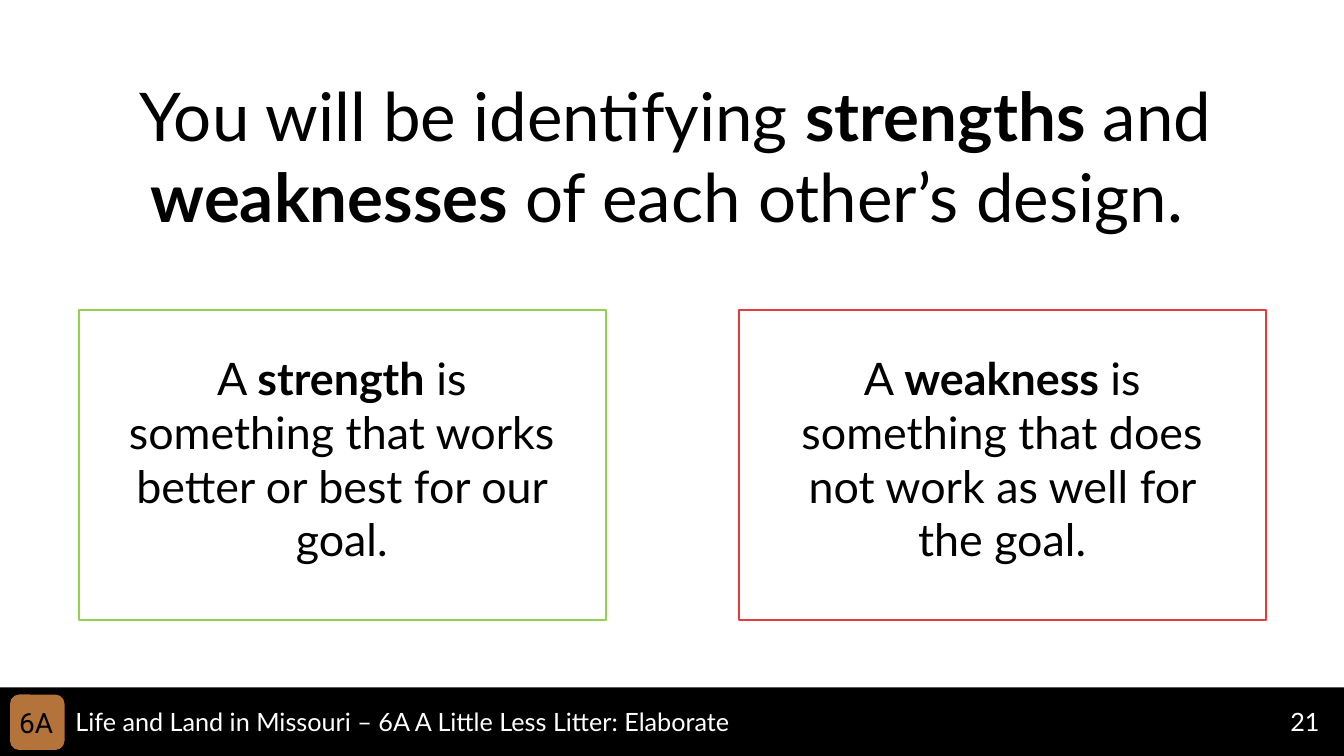
import pptx
import pptx.util
import pptx.dml.color
import pptx.enum.shapes
import pptx.enum.text

PX = 9144
RGBColor = pptx.dml.color.RGBColor
SHAPE = pptx.enum.shapes.MSO_SHAPE
ALIGN = pptx.enum.text.PP_ALIGN

BLACK = RGBColor(0x00, 0x00, 0x00)
WHITE = RGBColor(0xFF, 0xFF, 0xFF)
BROWN = RGBColor(0xB4, 0x73, 0x3B)
GREEN = RGBColor(0x92, 0xD0, 0x50)
RED = RGBColor(0xE4, 0x3C, 0x3C)


def to_emu(box):
    return [length * PX for length in box]


def add_panel(page, kind, box, fill=None, line=None):
    panel = page.shapes.add_shape(kind, *to_emu(box))
    panel.shadow.inherit = False
    if fill is None:
        panel.fill.background()
    else:
        panel.fill.solid()
        panel.fill.fore_color.rgb = fill
    if line is None:
        panel.line.fill.background()
    else:
        panel.line.color.rgb = line
        panel.line.width = pptx.util.Pt(1.5)


def add_text(page, box, spans, size, color=BLACK, font="Lato", align=ALIGN.LEFT):
    frame = page.shapes.add_textbox(*to_emu(box)).text_frame
    frame.word_wrap = True
    para = frame.paragraphs[0]
    para.alignment = align
    for words, bold in spans:
        span = para.add_run()
        span.text = words
        span.font.name = font
        span.font.size = pptx.util.Pt(size)
        span.font.bold = bold
        span.font.color.rgb = color


def add_footer(page, box, unit, title, number):
    left, top, width, height = box
    add_panel(page, SHAPE.RECTANGLE, box, fill=BLACK)
    add_text(page, (left + width - 63, top + 14, 54, 40), [(number, False)], 18, WHITE)
    add_text(page, (left + 65, top + 14, 861, 40), [(title, False)], 18, WHITE)
    add_panel(page, SHAPE.ROUNDED_RECTANGLE, (left + 10, top + 7, 54, 55), fill=BROWN)
    add_text(page, (left + 9, top + 13, 365, 44), [(unit, False)], 20, font="Roboto")


def add_headline(page, box, spans):
    add_text(page, box, spans, 48, align=ALIGN.CENTER)


def add_definition(page, box, spans, color):
    left, top, width, height = box
    text_box = (left + 31, top + 35, width - 63, height - 81)
    add_text(page, text_box, spans, 32, align=ALIGN.CENTER)
    add_panel(page, SHAPE.RECTANGLE, box, line=color)


def main():
    deck = pptx.Presentation()
    deck.slide_width = 1333 * PX
    deck.slide_height = 750 * PX
    page = deck.slides.add_slide(deck.slide_layouts[6])

    add_footer(page, (0, 682, 1333, 70), "6A",
               "Life and Land in Missouri – 6A A Little Less Litter: Elaborate", "21")
    add_headline(page, (43, 69, 1254, 172), [
        ("You will be identifying ", False),
        ("strengths", True),
        (" and ", False),
        ("weaknesses", True),
        (" of each other’s design. ", False),
    ])
    definitions = [
        (GREEN, [("A ", False), ("strength", True),
                 (" is something that works better or best for our goal.", False)]),
        (RED, [("A ", False), ("weakness ", True),
               ("is something that does not work as well for the goal.", False)]),
    ]
    for column, (color, spans) in enumerate(definitions):
        add_definition(page, (78 + 655 * column, 308, 523, 307), spans, color)

    deck.save("out.pptx")


if __name__ == "__main__":
    main()
